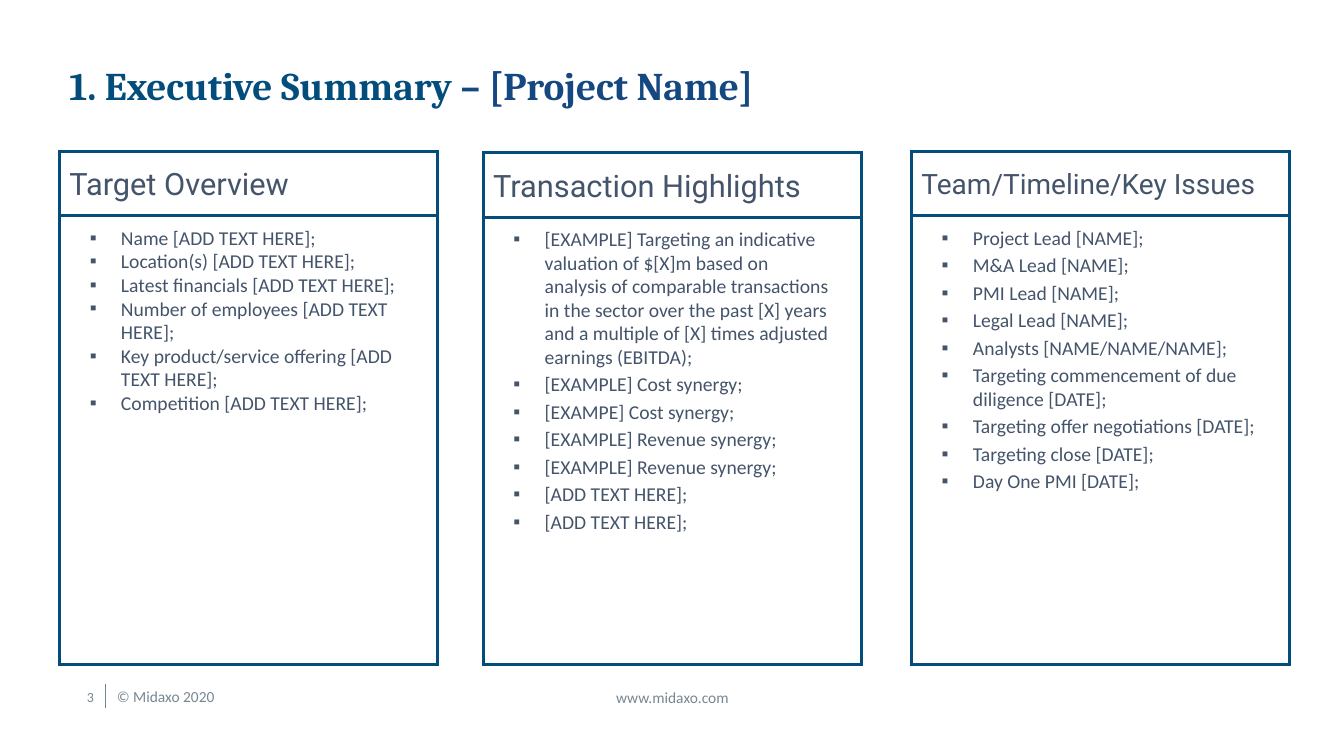
from dataclasses import dataclass
from typing import Any

from lxml import etree
from pptx import Presentation, util as u
from pptx.dml import color
from pptx.enum import shapes, text
from pptx.oxml import ns


@dataclass(frozen=True)
class Style:
    font: str
    size: int
    ink: str
    bold: bool = False


@dataclass(frozen=True)
class Theme:
    border: str = "034D7C"
    paper: str = "FFFFFF"
    rule: str = "778791"
    border_width: float = 2.25
    rule_width: float = 1
    title: Style = Style("Cambria", 28, "034D7C", True)
    project: Style = Style("Cambria", 28, "154781", True)
    heading: Style = Style("Roboto", 22, "44546A")
    long_heading: Style = Style("Roboto", 20, "44546A")
    body: Style = Style("Calibri", 14, "44546A")
    footer: Style = Style("Calibri", 11, "778791")
    page_number: Style = Style("Calibri", 10, "778791")


@dataclass(frozen=True)
class Area:
    column: float
    row: float
    columns: float
    rows: float


@dataclass(frozen=True)
class Panel:
    heading: str
    style: Style
    column: float
    row: float
    item_gap: float
    items: tuple[str, ...]


@dataclass(frozen=True)
class Label:
    area: Area
    align: text.PP_ALIGN
    runs: tuple[tuple[str, Style], ...]


THEME = Theme()
CELL = u.Inches(0.1)
PANEL_COLUMNS, HEADING_ROWS, PANEL_BOTTOM = 37.5, 6.4, 65.9
BULLET_INDENT = u.Inches(0.31)

LABELS = (
    Label(Area(50.8, 67.7, 31.8, 2.9), text.PP_ALIGN.CENTER,
          (("www.midaxo.com", THEME.footer),)),
    Label(Area(10.6, 67.65, 22.2, 2.9), text.PP_ALIGN.LEFT,
          (("© Midaxo 2020", THEME.footer),)),
    Label(Area(5.9, 4.15, 121.7, 8.5), text.PP_ALIGN.LEFT,
          (("1. Executive Summary ", THEME.title),
           ("– [Project Name]", THEME.project))),
    Label(Area(5.9, 67.1, 4.4, 4), text.PP_ALIGN.RIGHT,
          (("3", THEME.page_number),)),
)

PANELS = (
    Panel("Target Overview", THEME.heading, 5.9, 15, 0, (
        "Name [ADD TEXT HERE];",
        "Location(s) [ADD TEXT HERE];",
        "Latest financials [ADD TEXT HERE];",
        "Number of employees [ADD TEXT HERE];",
        "Key product/service offering [ADD TEXT HERE];",
        "Competition [ADD TEXT HERE];",
    )),
    Panel("Transaction Highlights", THEME.heading, 47.93, 15.14, 2.8, (
        "[EXAMPLE] Targeting an indicative valuation of $[X]m based on analysis "
        "of comparable transactions in the sector over the past [X] years and a "
        "multiple of [X] times adjusted earnings (EBITDA);",
        "[EXAMPLE] Cost synergy;",
        "[EXAMPE] Cost synergy;",
        "[EXAMPLE] Revenue synergy;",
        "[EXAMPLE] Revenue synergy;",
        "[ADD TEXT HERE];",
        "[ADD TEXT HERE];",
    )),
    Panel("Team/Timeline/Key Issues", THEME.long_heading, 90.4, 15, 2.8, (
        "Project Lead [NAME];",
        "M&A Lead [NAME];",
        "PMI Lead [NAME];",
        "Legal Lead [NAME];",
        "Analysts [NAME/NAME/NAME];",
        "Targeting commencement of due diligence [DATE];",
        "Targeting offer negotiations [DATE];",
        "Targeting close [DATE];",
        "Day One PMI [DATE];",
    )),
)


def apply_format(target: Any, values: dict[str, Any]) -> None:
    for attribute, value in values.items():
        setattr(target, attribute, value)


def rgb(code: str) -> color.RGBColor:
    return color.RGBColor.from_string(code)


def place(area: Area) -> tuple[int, ...]:
    return tuple(round(cells * CELL) for cells in
                 (area.column, area.row, area.columns, area.rows))


def add_run(paragraph: Any, words: str, style: Style) -> None:
    run = paragraph.add_run()
    run.text = words
    apply_format(run.font, {"name": style.font, "size": u.Pt(style.size),
                            "bold": style.bold})
    run.font.color.rgb = rgb(style.ink)


def add_bullet(paragraph: Any) -> None:
    properties = paragraph._p.get_or_add_pPr()
    properties.set("marL", str(BULLET_INDENT))
    properties.set("indent", str(-BULLET_INDENT))
    etree.SubElement(properties, ns.qn("a:buFont")).set("typeface", "Arial")
    etree.SubElement(properties, ns.qn("a:buChar")).set("char", "▪")


def draw_label(slide: Any, label: Label) -> None:
    frame = slide.shapes.add_textbox(*place(label.area)).text_frame
    apply_format(frame, {"word_wrap": True,
                         "vertical_anchor": text.MSO_ANCHOR.MIDDLE})
    paragraph = frame.paragraphs[0]
    paragraph.alignment = label.align
    for words, style in label.runs:
        add_run(paragraph, words, style)


def draw_frame(slide: Any, area: Area, filled: bool,
               frame_format: dict[str, Any]) -> Any:
    outline = slide.shapes.add_shape(shapes.MSO_SHAPE.RECTANGLE, *place(area))
    outline.shadow.inherit = False
    if filled:
        outline.fill.solid()
        outline.fill.fore_color.rgb = rgb(THEME.paper)
    else:
        outline.fill.background()
    outline.line.color.rgb = rgb(THEME.border)
    outline.line.width = u.Pt(THEME.border_width)
    border = outline._element.spPr.find(ns.qn("a:ln"))
    etree.SubElement(border, ns.qn("a:miter")).set("lim", "800000")
    apply_format(outline.text_frame, {"word_wrap": True, **frame_format})
    return outline.text_frame


def draw_panel(slide: Any, panel: Panel) -> None:
    body_row = panel.row + HEADING_ROWS
    body = draw_frame(
        slide,
        Area(panel.column, body_row, PANEL_COLUMNS, PANEL_BOTTOM - body_row),
        False,
        {"vertical_anchor": text.MSO_ANCHOR.TOP, "margin_left": u.Inches(0.3),
         "margin_right": u.Inches(0.3), "margin_top": u.Inches(0.1),
         "margin_bottom": 0})
    for position, item in enumerate(panel.items):
        paragraph = body.add_paragraph() if position else body.paragraphs[0]
        add_bullet(paragraph)
        apply_format(paragraph, {
            "alignment": text.PP_ALIGN.LEFT,
            "space_before": u.Pt(panel.item_gap if position else 0)})
        add_run(paragraph, item, THEME.body)

    heading = draw_frame(
        slide, Area(panel.column, panel.row, PANEL_COLUMNS, HEADING_ROWS),
        True, {"vertical_anchor": text.MSO_ANCHOR.MIDDLE}).paragraphs[0]
    heading.alignment = text.PP_ALIGN.LEFT
    add_run(heading, panel.heading, panel.style)


def draw_footer_rule(slide: Any) -> None:
    left, top, width, height = place(Area(10.46, 67.9, 0, 2.3))
    rule = slide.shapes.add_connector(
        shapes.MSO_CONNECTOR.STRAIGHT, left, top, left + width, top + height)
    rule.line.color.rgb = rgb(THEME.rule)
    rule.line.width = u.Pt(THEME.rule_width)
    etree.SubElement(rule._element.spPr, ns.qn("a:effectLst"))


def main() -> None:
    deck = Presentation()
    apply_format(deck, {"slide_width": u.Inches(13.33),
                        "slide_height": u.Inches(7.5)})
    slide = deck.slides.add_slide(deck.slide_layouts[6])
    draw_footer_rule(slide)
    for label in LABELS:
        draw_label(slide, label)
    for panel in PANELS:
        draw_panel(slide, panel)
    deck.save("out.pptx")


if __name__ == "__main__":
    main()
